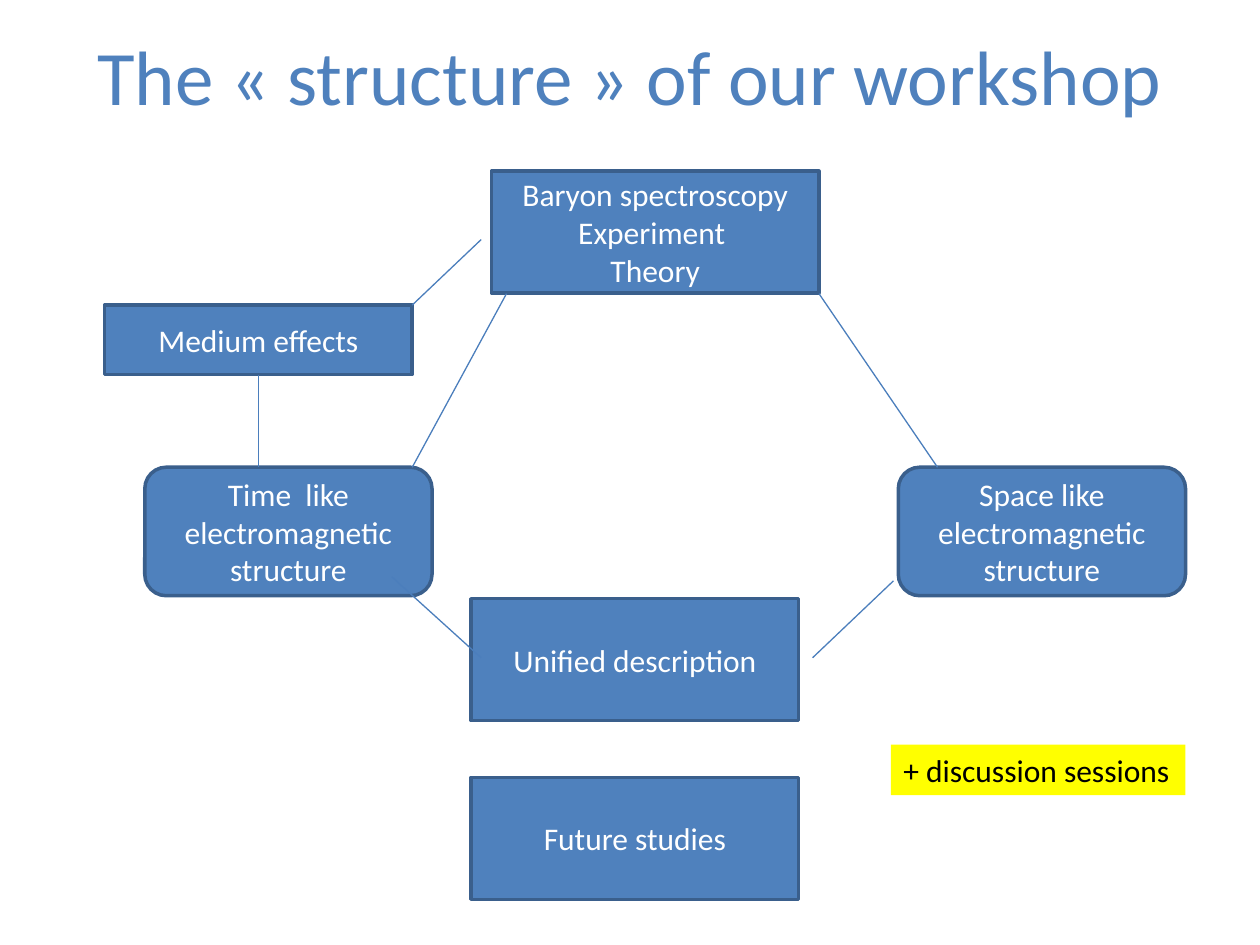
from typing import NamedTuple

from lxml import etree
from pptx import Presentation
from pptx.dml.color import RGBColor
from pptx.enum import shapes, text
from pptx.oxml.ns import qn
from pptx.util import Cm, Pt

BLUE, EDGE, LINK = "4F81BD", "3A5F8C", "4B7EBC"
WHITE, BLACK, YELLOW = "FFFFFF", "000000", "FFFF00"
RECT = shapes.MSO_SHAPE.RECTANGLE
ROUNDED = shapes.MSO_SHAPE.ROUNDED_RECTANGLE


class Topic(NamedTuple):
    label: str
    left: float
    top: float
    width: float = 6.6
    height: float = 2.46
    outline: shapes.MSO_SHAPE = RECT


class Link(NamedTuple):
    x1: float
    y1: float
    x2: float
    y2: float


STRUCTURE = {"top": 9.42, "width": 5.79, "height": 2.59, "outline": ROUNDED}
TOPICS = [
    Topic("Baryon spectroscopy\nExperiment \nTheory", 9.91, 3.45),
    Topic("Medium effects", 2.11, 6.15, 6.2, 1.4),
    Topic("Time  like electromagnetic structure", 2.92, **STRUCTURE),
    Topic("Space like electromagnetic structure", 18.11, **STRUCTURE),
    Topic("Unified description", 9.5, 12.07),
    Topic("Future studies", 9.5, 15.67),
]
LINKS = [
    Link(5.21, 7.55, 5.21, 9.42),
    Link(16.51, 5.92, 18.9, 9.42),
    Link(9.7, 4.83, 8.31, 6.15),
    Link(7.9, 11.63, 9.7, 13.26),
    Link(18.01, 11.71, 16.38, 13.26),
    Link(10.21, 5.92, 8.31, 9.42),
]


def rgb(value: str) -> RGBColor:
    return RGBColor.from_string(value)


def write(frame, label: str, color: str, size: float = 18,
          align=text.PP_ALIGN.CENTER, **frame_format) -> None:
    frame.text = label
    for name, value in frame_format.items():
        setattr(frame, name, value)
    for paragraph in frame.paragraphs:
        paragraph.alignment = align
        for name, value in {"name": "Calibri", "size": Pt(size)}.items():
            setattr(paragraph.font, name, value)
        paragraph.font.color.rgb = rgb(color)


def draw_topic(slide, topic: Topic) -> None:
    box = slide.shapes.add_shape(
        topic.outline, *map(Cm, (topic.left, topic.top, topic.width, topic.height)))
    box.shadow.inherit = False
    box.fill.solid()
    box.fill.fore_color.rgb = rgb(BLUE)
    box.line.color.rgb = rgb(EDGE)
    box.line.width = Pt(2)
    write(box.text_frame, topic.label, WHITE, word_wrap=True,
          vertical_anchor=text.MSO_ANCHOR.MIDDLE)


def draw_link(slide, link: Link) -> None:
    line = slide.shapes.add_connector(shapes.MSO_CONNECTOR.STRAIGHT, *map(Cm, link))
    line.line.color.rgb = rgb(LINK)
    line.line.width = Pt(0.75)
    etree.SubElement(line._element.spPr, qn("a:effectLst"))


def draw_note(slide) -> None:
    note = slide.shapes.add_textbox(Cm(17.96), Cm(15.01), Cm(5.94), Cm(1.02))
    note.fill.solid()
    note.fill.fore_color.rgb = rgb(YELLOW)
    write(note.text_frame, "+ discussion sessions", BLACK,
          align=text.PP_ALIGN.LEFT, word_wrap=False,
          auto_size=text.MSO_AUTO_SIZE.SHAPE_TO_FIT_TEXT)


def main() -> None:
    deck = Presentation()
    deck.slide_width, deck.slide_height = Cm(25.4), Cm(19.05)
    slide = deck.slides.add_slide(deck.slide_layouts[5])

    title = slide.shapes.title
    place = {"left": 1.27, "top": -0.08, "width": 22.86, "height": 3.18}
    for name, value in place.items():
        setattr(title, name, Cm(value))
    write(title.text_frame, "The « structure » of our workshop", BLUE, 44,
          vertical_anchor=text.MSO_ANCHOR.MIDDLE)

    for topic in TOPICS:
        draw_topic(slide, topic)
    for link in LINKS:
        draw_link(slide, link)
    draw_note(slide)
    deck.save("out.pptx")


if __name__ == "__main__":
    main()
